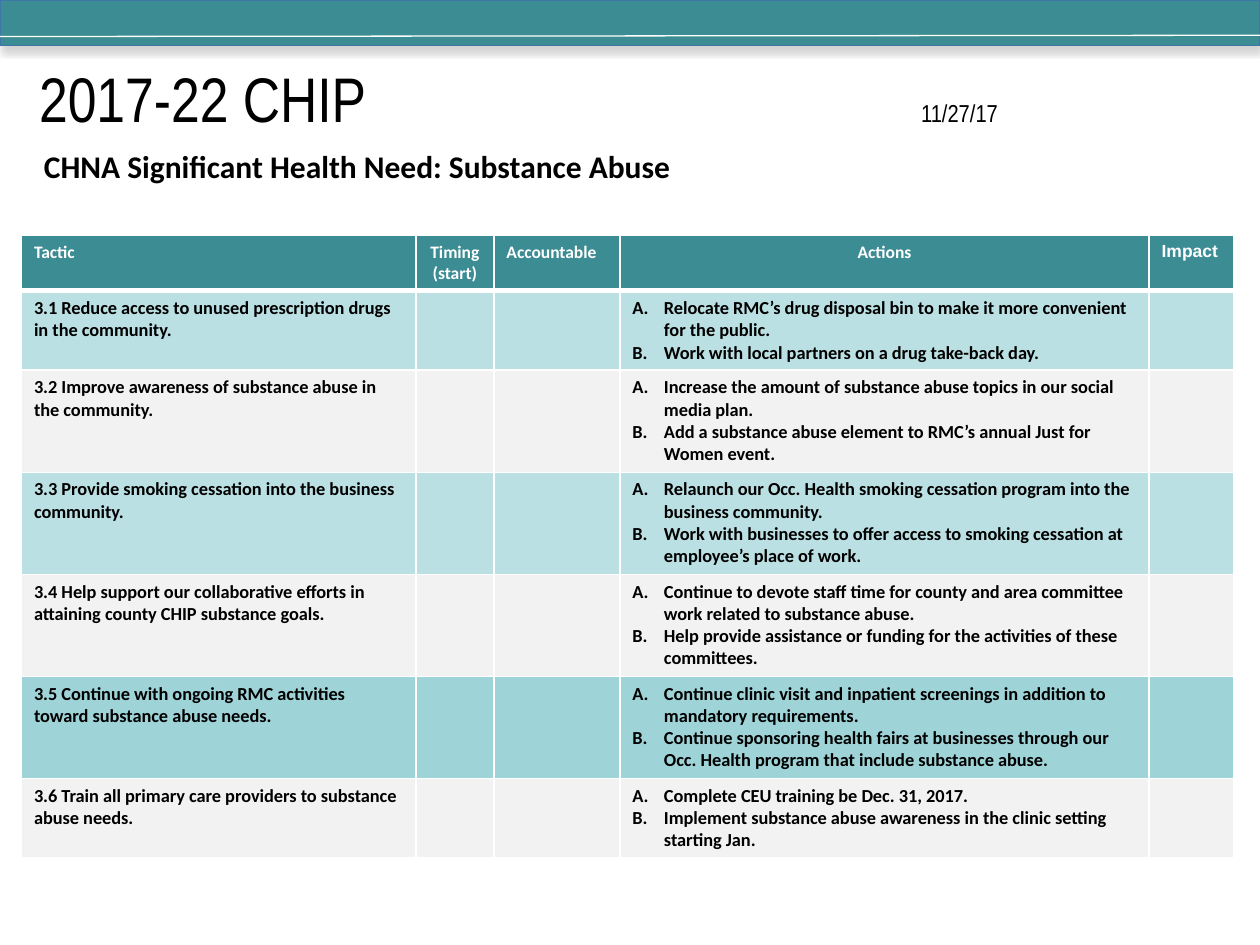
from dataclasses import dataclass

from lxml.etree import SubElement
from pptx import Presentation
from pptx.dml.color import RGBColor
from pptx.enum.shapes import MSO_CONNECTOR as CONN, MSO_SHAPE as SHAPE
from pptx.enum.text import MSO_ANCHOR as ANCHOR, MSO_AUTO_SIZE as AUTO, PP_ALIGN as ALIGN
from pptx.oxml.ns import qn
from pptx.util import Inches, Pt

COLORS = {
    "teal": "3C8C93", "edge": "3E76A8", "white": "FFFFFF", "black": "000000",
    "light": "BBE0E3", "gray": "F2F2F2", "mid": "9ED3D7",
}
COL_WIDTHS = (3.13, 0.62, 1, 4.2, 0.67)
HEADER_HEIGHT = 0.43
ACTIONS_COL = 3


@dataclass
class Heading:
    text: str
    align: ALIGN = ALIGN.LEFT
    font: str = "Calibri"


@dataclass
class Tactic:
    text: str
    actions: tuple[str, ...]
    fill: str
    height: float = 0.81


HEADINGS = (
    Heading("Tactic"),
    Heading("Timing (start)", ALIGN.CENTER),
    Heading("Accountable"),
    Heading("Actions", ALIGN.CENTER),
    Heading("Impact", font="Arial"),
)
TACTICS = (
    Tactic("3.1 Reduce access to unused prescription drugs in the community.",
           ("Relocate RMC’s drug disposal bin to make it more convenient for the public.",
            "Work with local partners on a drug take-back day."), "light", 0.63),
    Tactic("3.2 Improve awareness of substance abuse in the community.",
           ("Increase the amount of substance abuse topics in our social media plan.",
            "Add a substance abuse element to RMC’s annual Just for Women event."), "gray"),
    Tactic("3.3 Provide smoking cessation into the business community.",
           ("Relaunch our Occ. Health smoking cessation program into the business community.",
            "Work with businesses to offer access to smoking cessation at employee’s place of work."),
           "light"),
    Tactic("3.4 Help support our collaborative efforts in attaining county CHIP substance goals.",
           ("Continue to devote staff time for county and area committee work related to substance abuse.",
            "Help provide assistance or funding for the activities of these committees."), "gray"),
    Tactic("3.5 Continue with ongoing RMC activities toward substance abuse needs.",
           ("Continue clinic visit and inpatient screenings in addition to mandatory requirements.",
            "Continue sponsoring health fairs at businesses through our Occ. Health program "
            "that include substance abuse."), "mid"),
    Tactic("3.6 Train all primary care providers to substance abuse needs.",
           ("Complete CEU training be Dec. 31, 2017.",
            "Implement substance abuse awareness in the clinic setting starting Jan."), "gray", 0.63),
)


def rgb(name: str) -> RGBColor:
    return RGBColor.from_string(COLORS[name])


def add_run(p, text: str, size: float, color: str = "black", **fmt) -> None:
    r = p.add_run()
    r.text = text
    r.font.color.rgb = rgb(color)
    for name, value in {"name": "Calibri", "bold": True, "size": Pt(size), **fmt}.items():
        setattr(r.font, name, value)


def style_cell(cell, fill: str, top: float = 1, bottom: float = 1) -> None:
    tc_pr = cell._tc.get_or_add_tcPr()
    for side, width in {"L": 1, "R": 1, "T": top, "B": bottom}.items():
        ln = SubElement(tc_pr, qn(f"a:ln{side}"), w=str(Pt(width)))
        solid = SubElement(ln, qn("a:solidFill"))
        SubElement(solid, qn("a:srgbClr"), val=COLORS["white"])
    cell.fill.solid()
    cell.fill.fore_color.rgb = rgb(fill)


def letter_bullet(p) -> None:
    p_pr = p._p.get_or_add_pPr()
    p_pr.set("marL", str(Inches(0.25)))
    p_pr.set("indent", str(Inches(-0.25)))
    SubElement(p_pr, qn("a:buFont"), typeface="+mj-lt")
    SubElement(p_pr, qn("a:buAutoNum"), type="alphaUcPeriod")


def add_banner(slide) -> None:
    sp = slide.shapes.add_shape(SHAPE.RECTANGLE, 0, 0, Inches(10), Inches(0.36))
    sp.fill.solid()
    sp.fill.fore_color.rgb = rgb("teal")
    sp.line.color.rgb = rgb("edge")
    sp.line.width = Pt(0.75)
    effects = SubElement(sp._element.spPr, qn("a:effectLst"))
    shadow = SubElement(effects, qn("a:outerShdw"), blurRad=str(Pt(4)), dist=str(Pt(3)),
                        dir="5400000", rotWithShape="0")
    clr = SubElement(shadow, qn("a:srgbClr"), val=COLORS["black"])
    SubElement(clr, qn("a:alpha"), val="16000")

    line = slide.shapes.add_connector(CONN.STRAIGHT, 0, Inches(0.29), Inches(10), Inches(0.28))
    line.line.color.rgb = rgb("white")
    line.line.width = Pt(0.75)
    SubElement(line._element.spPr, qn("a:effectLst"))


def add_title(slide) -> None:
    sp = slide.shapes.title
    box = {"left": 0.21, "top": 0.5, "width": 9.57, "height": 0.54}
    for name, value in box.items():
        setattr(sp, name, Inches(value))
    tf = sp.text_frame
    tf.auto_size = AUTO.NONE
    tf.vertical_anchor = ANCHOR.MIDDLE
    p = tf.paragraphs[0]
    p.alignment = ALIGN.LEFT
    tabs = SubElement(p._p.get_or_add_pPr(), qn("a:tabLst"))
    SubElement(tabs, qn("a:tab"), pos=str(Inches(7)), algn="l")
    add_run(p, "2017-22 CHIP\t", 36, name="Arial Narrow", bold=False)
    add_run(p, "11/27/17", 14, name="Arial Narrow", bold=False)


def add_subtitle(slide) -> None:
    sp = slide.shapes.add_textbox(Inches(0.25), Inches(1.12), Inches(5.22), Inches(0.71))
    sp.text_frame.word_wrap = False
    add_run(sp.text_frame.paragraphs[0], "CHNA Significant Health Need: Substance Abuse", 18)


def add_tactics_table(slide) -> None:
    heights = [HEADER_HEIGHT, *(t.height for t in TACTICS)]
    table = slide.shapes.add_table(
        len(heights), len(COL_WIDTHS), Inches(0.17), Inches(1.87),
        Inches(sum(COL_WIDTHS)), Inches(sum(heights))).table
    for col, width in zip(table.columns, COL_WIDTHS):
        col.width = Inches(width)
    for row, height in zip(table.rows, heights):
        row.height = Inches(height)

    for c, heading in enumerate(HEADINGS):
        cell = table.cell(0, c)
        style_cell(cell, "teal", bottom=3)
        p = cell.text_frame.paragraphs[0]
        p.alignment = heading.align
        add_run(p, heading.text, 10, "white", name=heading.font)

    for r, tactic in enumerate(TACTICS, 1):
        for c in range(len(COL_WIDTHS)):
            style_cell(table.cell(r, c), tactic.fill, top=3 if r == 1 else 1)
        add_run(table.cell(r, 0).text_frame.paragraphs[0], tactic.text, 10.5)
        tf = table.cell(r, ACTIONS_COL).text_frame
        for i, action in enumerate(tactic.actions):
            p = tf.add_paragraph() if i else tf.paragraphs[0]
            letter_bullet(p)
            add_run(p, action, 10.5)


def main() -> None:
    prs = Presentation()
    prs.slide_width, prs.slide_height = Inches(10), Inches(7.5)
    slide = prs.slides.add_slide(prs.slide_layouts[5])
    add_banner(slide)
    add_title(slide)
    add_tactics_table(slide)
    add_subtitle(slide)
    prs.save("out.pptx")


if __name__ == "__main__":
    main()
